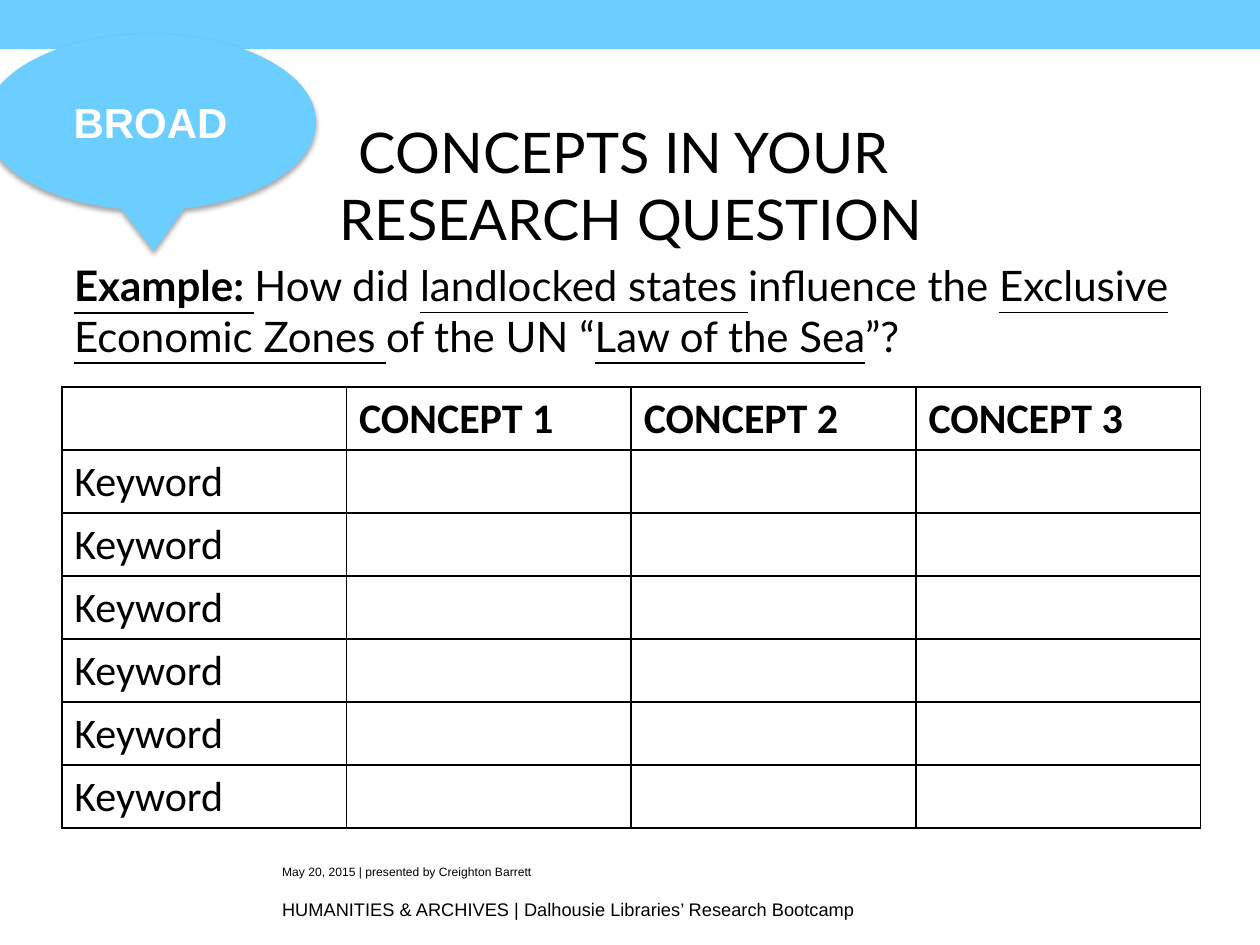
from pptx import Presentation
from pptx.dml.color import RGBColor
from pptx.enum.shapes import MSO_SHAPE
from pptx.enum.text import MSO_ANCHOR, PP_ALIGN
from pptx.oxml import parse_xml
from pptx.oxml.ns import nsdecls
from pptx.util import Inches, Pt

SKY = RGBColor(0x6C, 0xCE, 0xFF)
BLACK = RGBColor(0, 0, 0)
WHITE = RGBColor(255, 255, 255)


class Deck:
    """Holds the style and the current slide."""

    body, foot, grid = "Lato", "Arial", "Calibri"

    def __init__(self, wide, high):
        self.file = Presentation()
        self.file.slide_width = Inches(wide)
        self.file.slide_height = Inches(high)
        self.slide = self.file.slides.add_slide(self.file.slide_layouts[6])

    def run(self, para, text, name, size, color=BLACK, raised=False, **form):
        run = para.add_run()
        run.text = text
        look = {"name": name, "size": Pt(size), **form}
        for key, value in look.items():
            setattr(run.font, key, value)
        run.font.color.rgb = color
        if raised:
            run._r.get_or_add_rPr().set("baseline", "30000")

    def text(self, box):
        frame = self.slide.shapes.add_textbox(*map(Inches, box)).text_frame
        frame.word_wrap = True
        return frame

    def shape(self, kind, box):
        shape = self.slide.shapes.add_shape(kind, *map(Inches, box))
        shape.shadow.inherit = False
        shape.fill.solid()
        shape.fill.fore_color.rgb = SKY
        shape.line.fill.background()
        return shape

    def shade(self, shape):
        list_ = shape._element.spPr.find("{*}effectLst")
        list_.append(parse_xml(
            f'<a:outerShdw {nsdecls("a")} blurRad="{Pt(3.1)}" dist="{Pt(1.8)}" '
            'dir="5400000" rotWithShape="0"><a:srgbClr val="000000">'
            '<a:alpha val="35000"/></a:srgbClr></a:outerShdw>'))

    def edge(self, cell):
        props = cell._tc.get_or_add_tcPr()
        for side in "LRTB":
            props.append(parse_xml(
                f'<a:ln{side} {nsdecls("a")} w="{Pt(1)}"><a:solidFill>'
                f'<a:srgbClr val="{BLACK}"/></a:solidFill></a:ln{side}>'))

    def table(self, rows, box):
        table = self.slide.shapes.add_table(
            len(rows), len(rows[0]), *map(Inches, box)).table
        for r, row in enumerate(rows):
            for c, word in enumerate(row):
                cell = table.cell(r, c)
                self.edge(cell)
                cell.fill.background()
                if word:
                    para = cell.text_frame.paragraphs[0]
                    self.run(para, word, self.grid, 24, bold=r == 0)


def main():
    deck = Deck(10, 7.5)

    # Footer
    foot = deck.text((2.14, 6.75, 5.64, 0.5))
    lines = [("May 20, 2015 | presented by Creighton Barrett", 12),
             ("HUMANITIES & ARCHIVES | Dalhousie Libraries’ Research Bootcamp", 18)]
    for i, (line, size) in enumerate(lines):
        para = foot.add_paragraph() if i else foot.paragraphs[0]
        para.line_spacing = 1.2
        deck.run(para, line, deck.foot, size, raised=True)

    # Top band
    deck.shape(MSO_SHAPE.RECTANGLE, (0, 0, 10, 0.39))

    # Title and example question
    body = deck.text((0.49, 0.88, 9.04, 0.63))
    title = body.paragraphs[0]
    title.alignment = PP_ALIGN.CENTER
    deck.run(title, "CONCEPTS IN YOUR ", deck.body, 32)
    title.add_line_break()
    deck.run(title, "RESEARCH QUESTION", deck.body, 32)

    quest = body.add_paragraph()
    quest.space_before = Pt(4.8)
    deck.run(quest, "Example: ", deck.body, 24, bold=True, underline=True)
    parts = ["How did ", "landlocked states ", "influence the ",
             "Exclusive Economic Zones ", "of the UN “", "Law of the Sea", "”?"]
    for i, part in enumerate(parts):
        deck.run(quest, part, deck.body, 24, underline=i % 2 == 1)

    # Keyword table
    head = ["", *(f"CONCEPT {n}" for n in range(1, 4))]
    rows = [head] + [["Keyword", "", "", ""]] * 6
    deck.table(rows, (0.49, 3.07, 9.04, 3.5))

    # Callout
    call = deck.shape(MSO_SHAPE.OVAL_CALLOUT, (-0.12, 0.27, 2.63, 1.4))
    call.adjustments[0], call.adjustments[1] = 0.01, 0.73
    deck.shade(call)
    call.text_frame.vertical_anchor = MSO_ANCHOR.MIDDLE
    para = call.text_frame.paragraphs[0]
    para.alignment = PP_ALIGN.CENTER
    deck.run(para, "BROAD", deck.foot, 24, WHITE, bold=True)

    deck.file.save("out.pptx")


if __name__ == "__main__":
    main()
